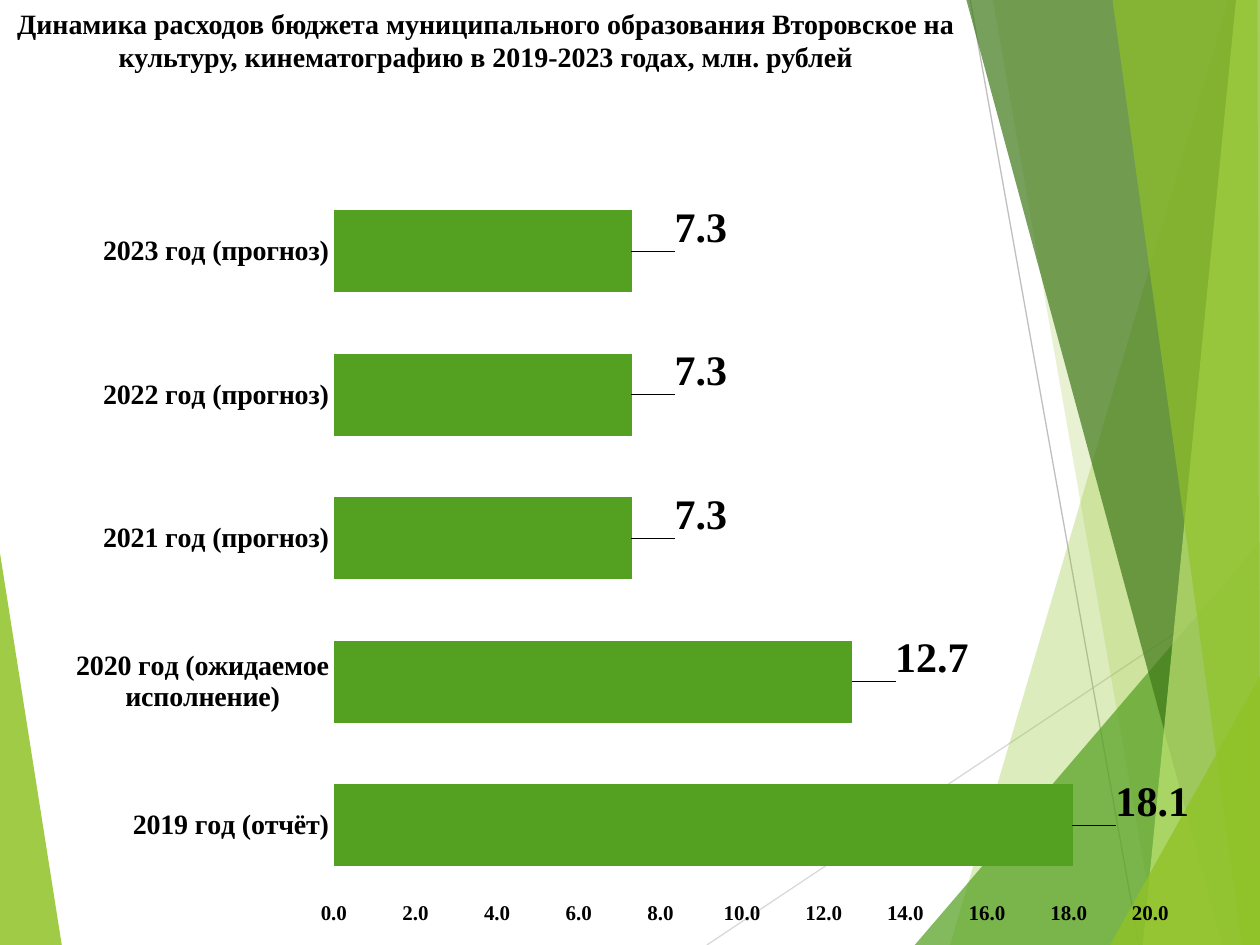
from lxml import etree
from pptx import Presentation
from pptx.chart.data import CategoryChartData
from pptx.dml.color import RGBColor
from pptx.enum.chart import XL_CHART_TYPE, XL_LABEL_POSITION, XL_TICK_MARK
from pptx.enum.shapes import MSO_CONNECTOR
from pptx.enum.text import MSO_ANCHOR, PP_ALIGN
from pptx.oxml import parse_xml
from pptx.oxml.ns import nsdecls, qn
from pptx.util import Inches, Pt

COLORS = {
    "lime": "90C226", "green": "54A021", "dark": "3F7819", "light": "C0E474",
    "line1": "D9D9D9", "line2": "BFBFBF", "text": "000000",
}
FONT = "Times New Roman"
TITLE = ("Динамика расходов бюджета муниципального образования Второвское на "
         "культуру, кинематографию в 2019-2023 годах, млн. рублей")
EXPENSES = [
    ("2019 год (отчёт)", 18.1),
    ("2020 год (ожидаемое исполнение)", 12.7),
    ("2021 год (прогноз)", 7.3),
    ("2022 год (прогноз)", 7.3),
    ("2023 год (прогноз)", 7.3),
]
LABEL_OFFSETS = [(0.03, -0.03), (0.03, -0.03), (0.03, -0.03), (0.03, -0.03), (0.03, -0.03)]
LABEL_OFFSET = (0.03, -0.03)
PLOT_AREA = (0.265, 0.025, 0.648, 0.914)
RAYS = [
    ("line1", (5.61, 7.5), (10.01, 4.57)),
    ("line2", (7.7, 0), (9.04, 7.5)),
]
LEFT_FACET = ("lime", 85, [(0, 4.39), (0.49, 7.5), (0, 7.5)])
RIGHT_FACETS = [
    ("lime", 30, [(9.75, 0), (7.54, 7.5), (10.01, 7.5), (10.01, 0)]),
    ("lime", 20, [(7.88, 0), (9.19, 7.5), (10.01, 7.5), (10.01, 0)]),
    ("green", 72, [(7.26, 7.5), (10.01, 4.29), (10.01, 7.5)]),
    ("dark", 70, [(7.67, 0), (9.7, 7.5), (10.01, 7.5), (10.01, 0)]),
    ("light", 70, [(9.81, 0), (9.07, 7.5), (10.01, 7.5), (10, 0)]),
    ("lime", 65, [(8.83, 0), (9.86, 7.5), (10, 7.5), (9.98, 0)]),
    ("lime", 80, [(8.81, 7.5), (10.01, 5.35), (10.01, 7.5)]),
]


def rgb(name):
    """Return the named colour."""
    return RGBColor.from_string(COLORS[name])


def style_font(font, size):
    """Make a font bold, black and of the given size."""
    font.name = FONT
    font.size = Pt(size)
    font.bold = True
    font.color.rgb = rgb("text")


def add_facet(s, left, top, color, opacity, points):
    """Draw one translucent polygon relative to a corner."""
    pts = [(left + Inches(x), top + Inches(y)) for x, y in points]
    builder = s.shapes.build_freeform(*pts[0])
    builder.add_line_segments(pts[1:], close=True)
    sp = builder.convert_to_shape()
    sp.shadow.inherit = False
    sp.fill.solid()
    sp.fill.fore_color.rgb = rgb(color)
    clr = next(sp.fill._xPr.iter(qn("a:srgbClr")))
    etree.SubElement(clr, qn("a:alpha"), val=str(opacity * 1000))
    sp.line.fill.background()


def add_ray(s, left, top, color, start, end):
    """Draw one thin line relative to a corner."""
    line = s.shapes.add_connector(
        MSO_CONNECTOR.STRAIGHT,
        left + Inches(start[0]), top + Inches(start[1]),
        left + Inches(end[0]), top + Inches(end[1]))
    line.line.color.rgb = rgb(color)
    line.line.width = Pt(0.75)
    etree.SubElement(line._element.spPr, qn("a:effectLst"))


def add_backdrop(s, left, top):
    """Draw the facets and rays behind the content."""
    add_facet(s, left, top, *LEFT_FACET)
    for ray in RAYS:
        add_ray(s, left, top, *ray)
    for facet in RIGHT_FACETS:
        add_facet(s, left, top, *facet)


def add_title(s, left, top, width, height):
    """Place the centred slide title."""
    tf = s.shapes.add_textbox(left, top, width, height).text_frame
    tf.word_wrap = True
    tf.vertical_anchor = MSO_ANCHOR.TOP
    p = tf.paragraphs[0]
    p.alignment = PP_ALIGN.CENTER
    r = p.add_run()
    r.text = TITLE
    style_font(r.font, 16)


def manual_layout(x, y, w=None, h=None):
    """Build a chart layout: an inner plot box, or a label offset without size."""
    parts = [("x", x), ("y", y)]
    if w is not None:
        parts = [("layoutTarget", "inner"), ("xMode", "edge"), ("yMode", "edge"),
                 *parts, ("w", w), ("h", h)]
    body = "".join(f'<c:{tag} val="{val}"/>' for tag, val in parts)
    return parse_xml(f'<c:layout {nsdecls("c")}><c:manualLayout>{body}'
                     '</c:manualLayout></c:layout>')


def style_axis(axis, size):
    """Show an axis as bare labels."""
    axis.major_tick_mark = XL_TICK_MARK.NONE
    axis.minor_tick_mark = XL_TICK_MARK.NONE
    axis.has_major_gridlines = False
    axis.format.line.fill.background()
    style_font(axis.tick_labels.font, size)


def style_labels(labels):
    """Format value labels beyond the bar ends."""
    labels.show_value = True
    labels.number_format = "0.0"
    labels.number_format_is_linked = False
    labels.position = XL_LABEL_POSITION.OUTSIDE_END
    style_font(labels.font, 24)


def add_expense_chart(s, left, top, width, height):
    """Place the bar chart of yearly expenses."""
    data = CategoryChartData(number_format="0.0")
    data.categories = [year for year, _ in EXPENSES]
    data.add_series("Series 1", [value for _, value in EXPENSES])
    chart = s.shapes.add_chart(
        XL_CHART_TYPE.BAR_CLUSTERED, left, top, width, height, data).chart
    chart.has_legend = False
    chart.has_title = False
    chart.font.name = "Lato"
    chart.font.size = Pt(10)
    chart.font.color.rgb = rgb("text")
    style_axis(chart.category_axis, 16)
    style_axis(chart.value_axis, 12)
    axis = chart.value_axis
    axis.minimum_scale, axis.maximum_scale, axis.major_unit = 0, 20, 2
    axis.tick_labels.number_format = "0.0"
    axis.tick_labels.number_format_is_linked = False

    plot = chart.plots[0]
    plot.gap_width = 75
    plot.vary_by_categories = False
    series = plot.series[0]
    series.format.fill.solid()
    series.format.fill.fore_color.rgb = rgb("green")
    style_labels(series.data_labels)
    for i in range(len(EXPENSES)):
        label = series.points[i].data_label
        style_font(label.font, 24)
        label.position = XL_LABEL_POSITION.OUTSIDE_END
    for item in series._element.iter(qn("c:dLbl")):
        item.find(qn("c:idx")).addnext(manual_layout(*LABEL_OFFSET))

    area = chart._chartSpace.chart.plotArea
    for old in area.findall(qn("c:layout")):
        area.remove(old)
    area.insert(0, manual_layout(*PLOT_AREA))


def main():
    """Build and save the slide."""
    prs = Presentation()
    prs.slide_width, prs.slide_height = Inches(10), Inches(7.5)
    s = prs.slides.add_slide(prs.slide_layouts[6])
    add_backdrop(s, Inches(0), Inches(0))
    add_title(s, Inches(0), Inches(0), Inches(7.71), Inches(1.09))
    add_expense_chart(s, Inches(0), Inches(1.27), Inches(10), Inches(6.23))
    prs.save("out.pptx")


if __name__ == "__main__":
    main()
